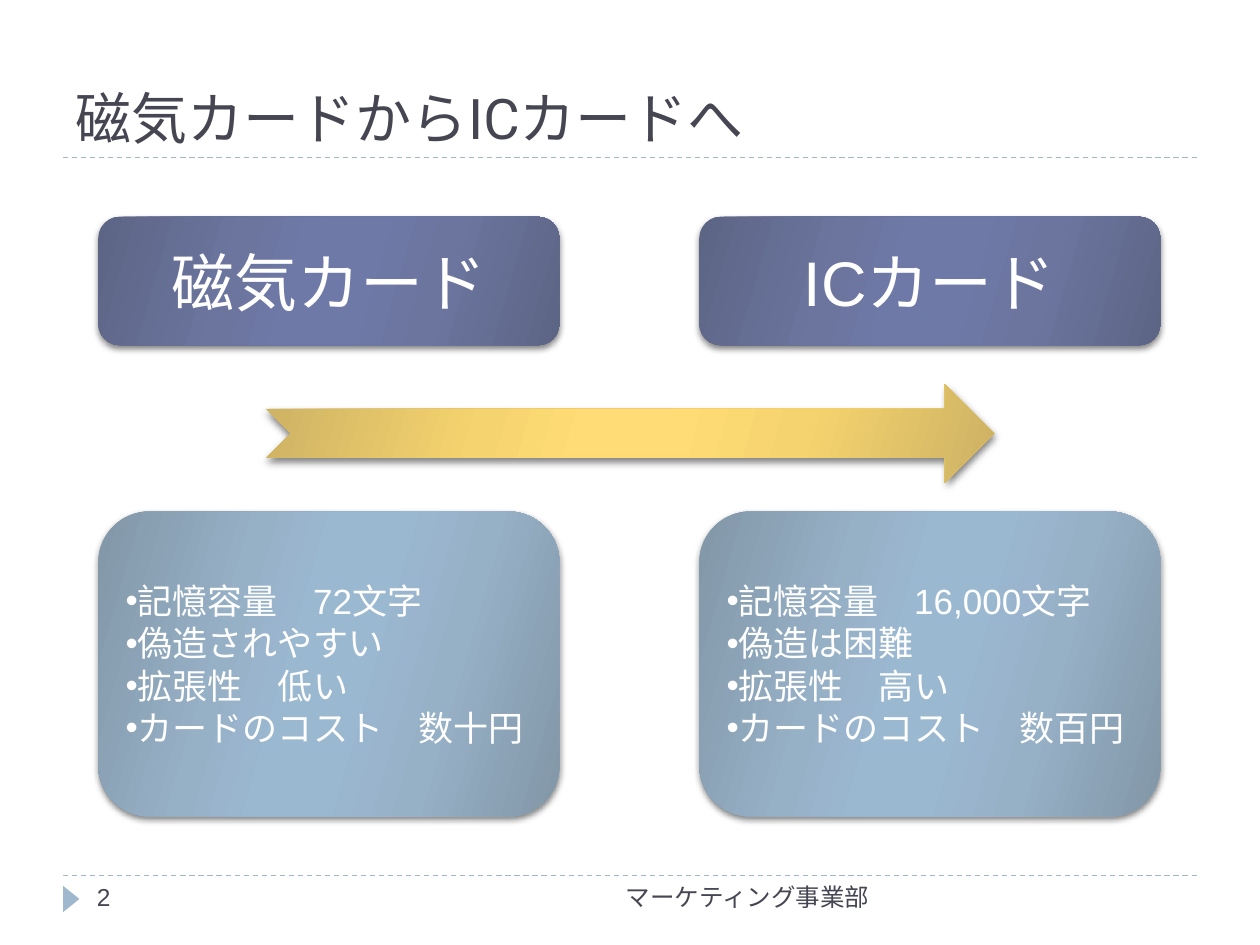
import pptx
import pptx.util
import pptx.dml.color
import pptx.enum.dml
import pptx.enum.shapes
import pptx.enum.text
import pptx.oxml.ns
from lxml import etree

W, H = 10, 7.5
COLUMNS = (0.78, 5.55)
COLUMN_W = 3.66
INK, ACCENT, WHITE = "464653", "9FB8CD", "FFFFFF"
STOPS = (0, 30, 45, 55, 73, 100)
INDIGO = ("5D6585", "6B759E", "6E79A7")
BLUE = ("8297A8", "96B0C6", "9BB8D1")
GOLD = ("CDB264", "F5D36E", "FFDC75")
SHAPE = pptx.enum.shapes.MSO_SHAPE
ALIGN = pptx.enum.text.PP_ALIGN
ANCHOR = pptx.enum.text.MSO_ANCHOR
CARDS = (
    ("磁気カード", ("記憶容量　72文字", "偽造されやすい", "拡張性　低い", "カードのコスト　数十円")),
    ("ICカード", ("記憶容量　16,000文字", "偽造は困難", "拡張性　高い", "カードのコスト　数百円")),
)


def rgb(color):
    return pptx.dml.color.RGBColor.from_string(color)


def inches(*values):
    return [pptx.util.Inches(v) for v in values]


def add_xml(parent, tag, **attrs):
    return etree.SubElement(parent, pptx.oxml.ns.qn(tag), attrs)


def write(sp, *lines, size, color=INK, font="Arial", align=ALIGN.LEFT,
          anchor=ANCHOR.TOP, bullet=None):
    tf = sp.text_frame
    tf.word_wrap = True
    tf.vertical_anchor = anchor
    for i, line in enumerate(lines):
        p = tf.add_paragraph() if i else tf.paragraphs[0]
        p.alignment = align
        if bullet:
            pPr = p._p.get_or_add_pPr()
            pPr.set("marL", "0")
            pPr.set("indent", "0")
            add_xml(pPr, "a:buFont", typeface="Arial")
            add_xml(pPr, "a:buChar", char=bullet)
        r = p.add_run()
        r.text = line
        r.font.size = pptx.util.Pt(size)
        r.font.name = font
        r.font.color.rgb = rgb(color)


def add_shadow(sp):
    sp.shadow.inherit = False
    effects = sp._element.spPr.find(pptx.oxml.ns.qn("a:effectLst"))
    shadow = add_xml(effects, "a:outerShdw", blurRad=str(pptx.util.Pt(4)),
                     dist=str(pptx.util.Pt(2)), dir="5400000", rotWithShape="0")
    add_xml(add_xml(shadow, "a:srgbClr", val="000000"), "a:alpha", val="50000")


def add_glossy(s, kind, box, tones):
    sp = s.shapes.add_shape(kind, *inches(*box))
    sp.line.fill.background()
    sp.fill.gradient()
    sp.fill.gradient_angle = 344
    stops = next(sp._element.spPr.iter(pptx.oxml.ns.qn("a:gsLst")))
    for stop in list(stops):
        stops.remove(stop)
    for position, tone in zip(STOPS, tones + tones[::-1]):
        stop = add_xml(stops, "a:gs", pos=str(position * 1000))
        add_xml(stop, "a:srgbClr", val=tone)
    add_shadow(sp)
    return sp


def add_rule(s, y):
    line = s.shapes.add_connector(pptx.enum.shapes.MSO_CONNECTOR.STRAIGHT,
                                  *inches(0.05 * W, y, 0.95 * W, y))
    line.line.color.rgb = rgb(ACCENT)
    line.line.width = pptx.util.Pt(0.75)
    line.line.dash_style = pptx.enum.dml.MSO_LINE.DASH
    add_xml(line._element.spPr, "a:effectLst")


def add_marker(s):
    sp = s.shapes.add_shape(SHAPE.ISOSCELES_TRIANGLE, *inches(0.46, 7.07, 0.21, 0.13))
    sp.rotation = 90
    sp.fill.solid()
    sp.fill.fore_color.rgb = rgb(ACCENT)
    sp.line.fill.background()
    sp.shadow.inherit = False


def add_title(s, text):
    sp = s.shapes.title
    sp.left, sp.top, sp.width, sp.height = inches(0.05 * W, 0.25, 0.9 * W, 1)
    write(sp, text, size=32, font="Roboto", anchor=ANCHOR.BOTTOM)


def add_footer(s, text, left, width, align):
    sp = s.shapes.add_textbox(*inches(left, 6.95, width, 0.4))
    write(sp, text, size=14, align=align)


def main():
    prs = pptx.Presentation()
    prs.slide_width, prs.slide_height = inches(W, H)
    s = prs.slides.add_slide(prs.slide_layouts[5])
    for y in (6.95, 1.25):
        add_rule(s, y)
    add_marker(s)
    add_title(s, "磁気カードからICカードへ")
    for x, (heading, points) in zip(COLUMNS, CARDS):
        head = add_glossy(s, SHAPE.ROUNDED_RECTANGLE, (x, 1.72, COLUMN_W, 1.02), INDIGO)
        write(head, heading, size=36, color=WHITE, align=ALIGN.CENTER, anchor=ANCHOR.MIDDLE)
        body = add_glossy(s, SHAPE.ROUNDED_RECTANGLE, (x, 4.06, COLUMN_W, 2.42), BLUE)
        write(body, *points, size=20, color=WHITE, anchor=ANCHOR.MIDDLE, bullet="•")
    add_glossy(s, SHAPE.NOTCHED_RIGHT_ARROW, (2.11, 3.05, 5.78, 0.78), GOLD)
    add_footer(s, "2", 0.67, 2.17, ALIGN.LEFT)
    add_footer(s, "マーケティング事業部", 3.17, 3.83, ALIGN.RIGHT)
    prs.save("out.pptx")


if __name__ == "__main__":
    main()
